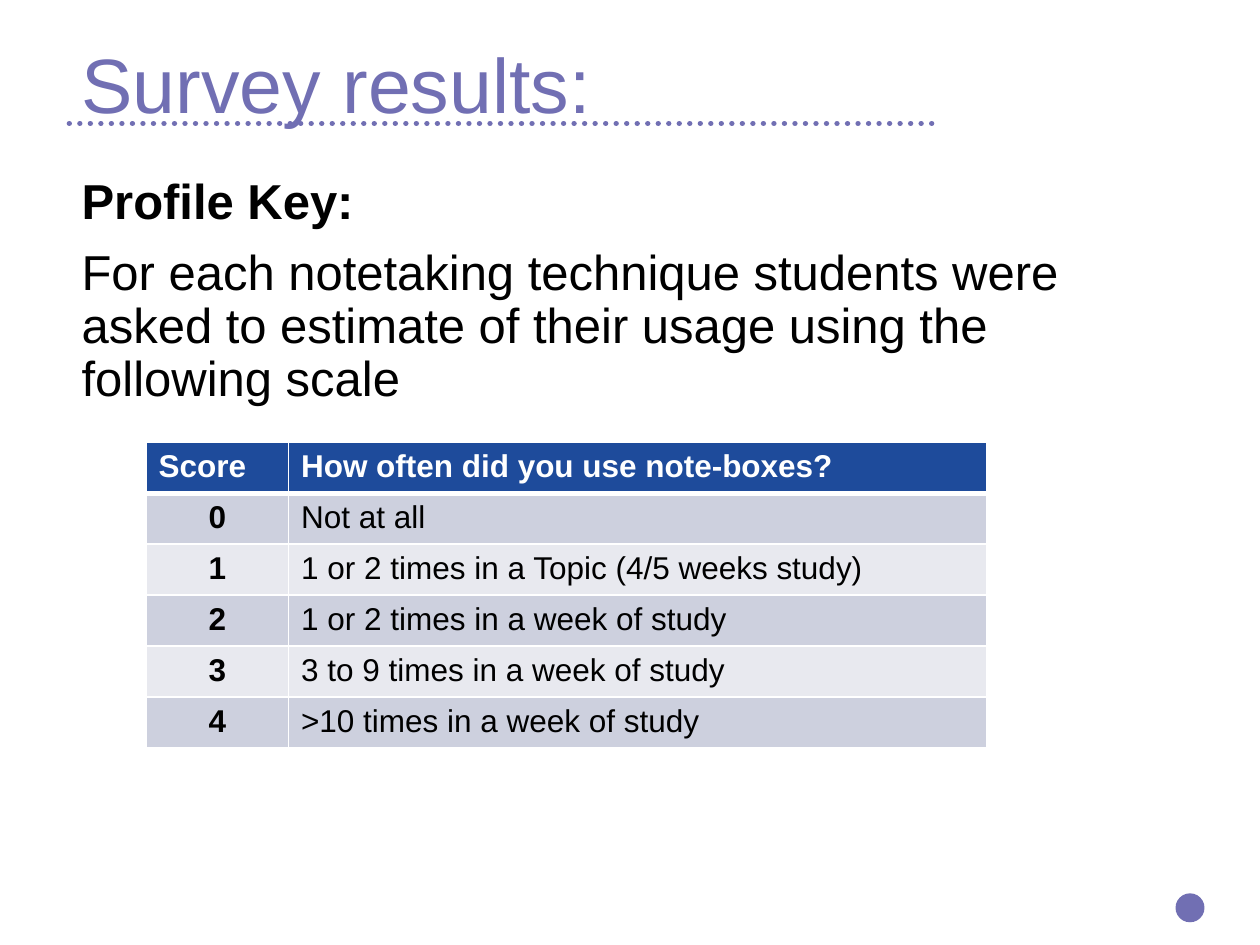
from lxml import etree
from pptx import Presentation
from pptx.dml.color import RGBColor
from pptx.enum import dml, shapes, text
from pptx.oxml import parse_xml
from pptx.oxml.ns import nsdecls, qn
from pptx.util import Inches, Pt

VIOLET = RGBColor(0x71, 0x6F, 0xB3)
NAVY = RGBColor(0x1E, 0x4B, 0x9B)
DARK = RGBColor(0xCD, 0xD0, 0xDE)
LIGHT = RGBColor(0xE8, 0xE9, 0xEF)
WHITE = RGBColor(0xFF, 0xFF, 0xFF)
BLACK = RGBColor(0, 0, 0)

SCALE = [
    ("Score", "How often did you use note-boxes?"),
    ("0", "Not at all"),
    ("1", "1 or 2 times in a Topic (4/5 weeks study)"),
    ("2", "1 or 2 times in a week of study"),
    ("3", "3 to 9 times in a week of study"),
    ("4", ">10 times in a week of study"),
]


def style(para, size, color, bold=False):
    look = {"name": "Arial", "size": Pt(size), "bold": bold}
    for key, value in look.items():
        setattr(para.font, key, value)
    para.font.color.rgb = color


def write(slide, box, lines, size, color):
    frame = slide.shapes.add_textbox(*map(Inches, box)).text_frame
    frame.word_wrap = True
    frame.vertical_anchor = text.MSO_ANCHOR.TOP
    for i, (words, bold) in enumerate(lines):
        para = frame.add_paragraph() if i else frame.paragraphs[0]
        para.text = words
        para.line_spacing = 0.9
        para.space_before = Pt(10 if i else 0)
        style(para, size, color, bold)


def add_rule(slide, left, top, width):
    rule = slide.shapes.add_connector(
        shapes.MSO_CONNECTOR.STRAIGHT,
        *map(Inches, (left, top, left + width, top)))
    rule.line.color.rgb = VIOLET
    rule.line.width = Pt(3)
    rule.line.dash_style = dml.MSO_LINE.ROUND_DOT
    rule.line._get_or_add_ln().set("cap", "rnd")
    etree.SubElement(rule._element.spPr, qn("a:effectLst"))


def add_dot(slide, left, top, size):
    dot = slide.shapes.add_shape(
        shapes.MSO_SHAPE.OVAL, *map(Inches, (left, top, size, size)))
    dot.shadow.inherit = False
    dot.fill.solid()
    dot.fill.fore_color.rgb = VIOLET
    dot.line.fill.background()


def add_edges(cell, head, last):
    props = cell._tc.get_or_add_tcPr()
    widths = {"lnL": 1, "lnR": 1, "lnT": 3 if last else 1, "lnB": 3 if head else 1}
    for i, (side, width) in enumerate(widths.items()):
        props.insert(i, parse_xml(
            f'<a:{side} {nsdecls("a")} w="{Pt(width)}"><a:solidFill>'
            f'<a:srgbClr val="{WHITE}"/></a:solidFill></a:{side}>'))


def add_scale(slide, box, split):
    left, top, width, height = box
    grid = slide.shapes.add_table(len(SCALE), 2, *map(Inches, box)).table
    for col, size in zip(grid.columns, (split, width - split)):
        col.width = Inches(size)
    for r, row in enumerate(SCALE):
        grid.rows[r].height = Inches(height / len(SCALE))
        for c, words in enumerate(row):
            cell = grid.cell(r, c)
            cell.text = words
            cell.fill.solid()
            cell.fill.fore_color.rgb = NAVY if r == 0 else DARK if r % 2 else LIGHT
            add_edges(cell, r == 0, r == 1)
            para = cell.text_frame.paragraphs[0]
            if r and c == 0:
                para.alignment = text.PP_ALIGN.CENTER
            style(para, 18, BLACK if r else WHITE, r == 0 or c == 0)


def main():
    deck = Presentation()
    deck.slide_width, deck.slide_height = Inches(10), Inches(7.5)
    slide = deck.slides.add_slide(deck.slide_layouts[6])
    add_dot(slide, 9.33, 7.09, 0.23)
    add_rule(slide, 0.55, 0.98, 6.92)
    write(slide, (0.55, 0.32, 7.31, 0.64), [("Survey results:", False)], 44, VIOLET)
    write(slide, (0.55, 1.36, 8.9, 5.62), [
        ("Profile Key:", True),
        ("For each notetaking technique students were asked to estimate "
         "of their usage using the following scale", False),
    ], 28, BLACK)
    add_scale(slide, (1.16, 3.51, 6.67, 2.43), 1.13)
    deck.save("out.pptx")


if __name__ == "__main__":
    main()
